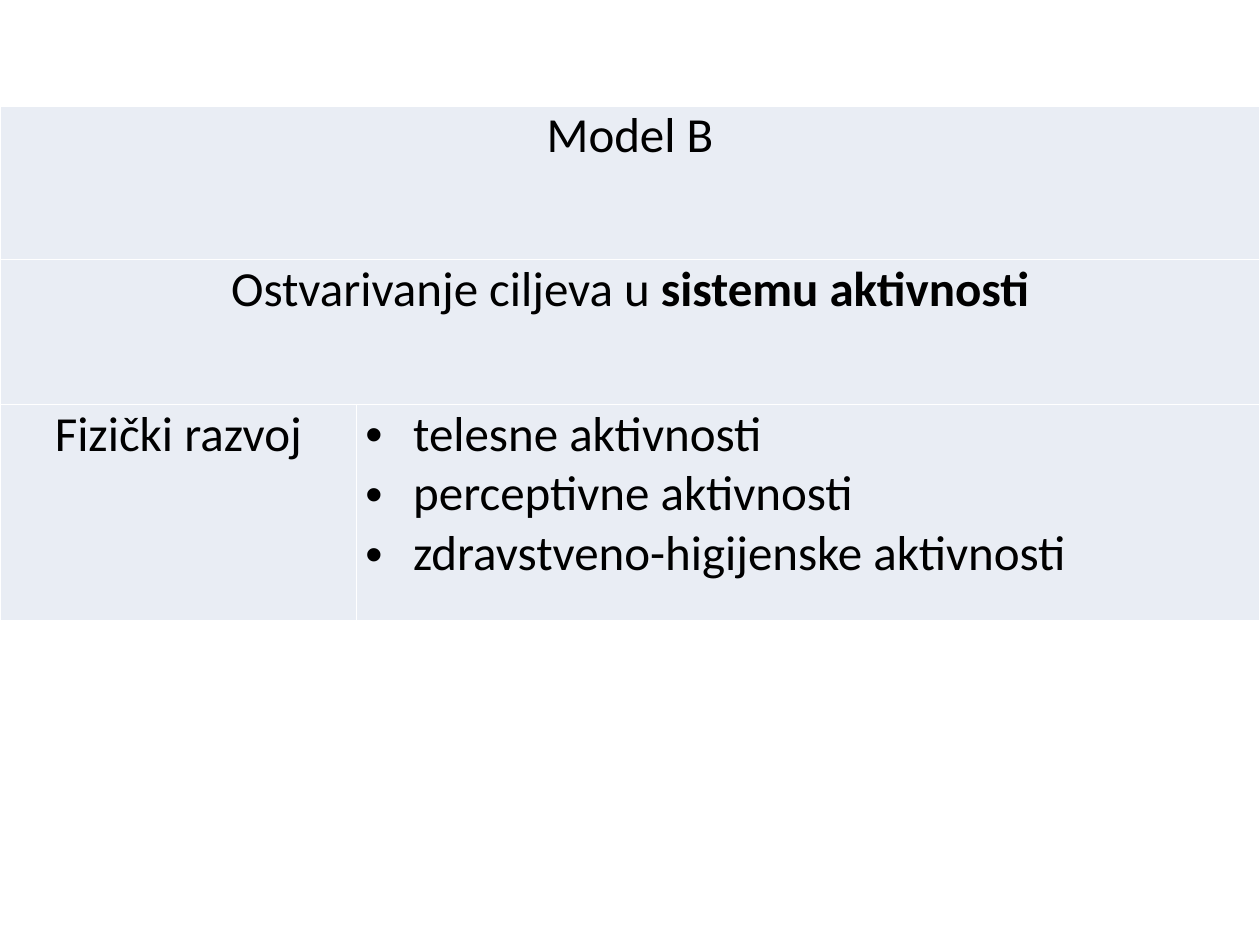
from dataclasses import dataclass
from pptx import Presentation
from pptx.dml.color import RGBColor as Color
from pptx.enum.text import PP_ALIGN as Align
from pptx.oxml import parse_xml
from pptx.oxml.ns import nsdecls
from pptx.util import Inches, Pt


@dataclass(frozen=True)
class Theme:
    font: str = "Calibri"
    size: int = 28
    ink: str = "000000"
    fill: str = "E9EDF4"
    edge: str = "FFFFFF"
    rule: int = 1
    pad: float = 0.07
    dent: float = 0.38


LOOK = Theme()
COLS = (2.83, 7.17)
ROWS = (1.22, 1.15, 1.72)
GOALS = (
    "telesne aktivnosti",
    "perceptivne aktivnosti",
    "zdravstveno-higijenske aktivnosti",
)


def style(cell):
    cell.margin_left = cell.margin_right = Inches(LOOK.pad)
    cell.margin_top = cell.margin_bottom = 0
    props = cell._tc.get_or_add_tcPr()
    for side in "LRTB":
        props.append(parse_xml(
            f'<a:ln{side} {nsdecls("a")} w="{Pt(LOOK.rule)}"><a:solidFill>'
            f'<a:srgbClr val="{LOOK.edge}"/></a:solidFill></a:ln{side}>'))
    cell.fill.solid()
    cell.fill.fore_color.rgb = Color.from_string(LOOK.fill)


def dot(para):
    props = para._p.get_or_add_pPr()
    dent = Inches(LOOK.dent)
    props.set("marL", str(dent))
    props.set("indent", str(-dent))
    props.append(parse_xml(f'<a:buFont {nsdecls("a")} typeface="Arial"/>'))
    props.append(parse_xml(f'<a:buChar {nsdecls("a")} char="•"/>'))


def write(cell, lines, list_style=False):
    frame = cell.text_frame
    for i, line in enumerate(lines):
        para = frame.add_paragraph() if i else frame.paragraphs[0]
        para.alignment = Align.LEFT if list_style else Align.CENTER
        font = para.font
        font.name, font.size = LOOK.font, Pt(LOOK.size)
        font.color.rgb = Color.from_string(LOOK.ink)
        if list_style:
            dot(para)
        for text, bold in line:
            run = para.add_run()
            run.text = text
            run.font.bold = bold


def model(slide, left, top, width, height):
    grid = slide.shapes.add_table(
        len(ROWS), len(COLS), left, top, width, height).table
    grid.first_row = grid.horz_banding = False
    for col, part in zip(grid.columns, COLS):
        col.width = int(width * part / sum(COLS))
    for row, part in zip(grid.rows, ROWS):
        row.height = int(height * part / sum(ROWS))
    for cell in grid.iter_cells():
        style(cell)
    for row in range(2):
        grid.cell(row, 0).merge(grid.cell(row, 1))
    write(grid.cell(0, 0), [[("Model B", False)]])
    write(grid.cell(1, 0), [[("Ostvarivanje ciljeva u ", False),
                             ("sistemu aktivnosti", True)]])
    write(grid.cell(2, 0), [[("Fizički razvoj", False)]])
    write(grid.cell(2, 1), [[(goal, False)] for goal in GOALS], True)


def main():
    deck = Presentation()
    deck.slide_width, deck.slide_height = Inches(10), Inches(7.5)
    slide = deck.slides.add_slide(deck.slide_layouts[6])
    model(slide, 0, Inches(0.84), deck.slide_width, Inches(sum(ROWS)))
    deck.save("out.pptx")


if __name__ == "__main__":
    main()
